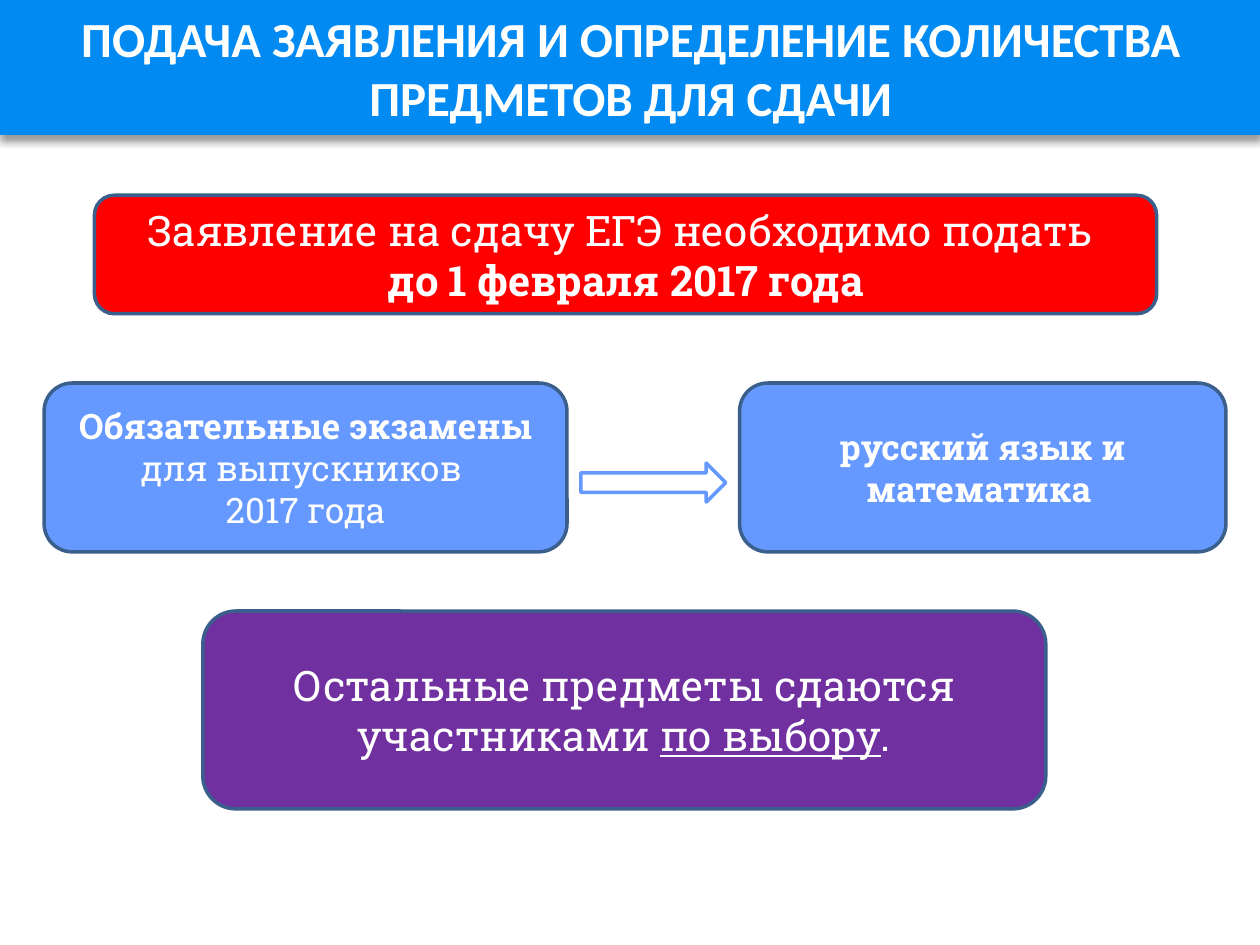
import dataclasses

import lxml.etree
import pptx
import pptx.dml.color
import pptx.enum.shapes
import pptx.enum.text
import pptx.oxml.ns
import pptx.util

Inches = pptx.util.Inches
Pt = pptx.util.Pt
SHAPE = pptx.enum.shapes.MSO_SHAPE


@dataclasses.dataclass(frozen=True)
class Theme:
    band: str = "008AF2"
    alert: str = "FF0000"
    exam: str = "6699FF"
    choice: str = "7030A0"
    edge: str = "3A5F8C"
    white: str = "FFFFFF"
    shade: str = "000000"
    head: str = "Calibri"
    body: str = "Roboto Slab"
    title: int = 28
    large: int = 24
    small: int = 20
    line: int = 2


THEME = Theme()


def color(code):
    return pptx.dml.color.RGBColor.from_string(code)


def paint(shape, fill, line=None):
    shape.fill.solid()
    shape.fill.fore_color.rgb = color(fill)
    if line:
        shape.line.color.rgb = color(line)
        shape.line.width = Pt(THEME.line)
    else:
        shape.line.fill.background()


def place(shape, box):
    shape.left, shape.top, shape.width, shape.height = map(Inches, box)


def write(shape, lines, face, size):
    """Each line is a list of runs: (text, bold, underline)."""
    frame = shape.text_frame
    frame.word_wrap = True
    frame.auto_size = pptx.enum.text.MSO_AUTO_SIZE.NONE
    frame.vertical_anchor = pptx.enum.text.MSO_ANCHOR.MIDDLE
    for i, line in enumerate(lines):
        para = frame.add_paragraph() if i else frame.paragraphs[0]
        para.alignment = pptx.enum.text.PP_ALIGN.CENTER
        for text, bold, under in line:
            run = para.add_run()
            run.text = text
            font = run.font
            font.name, font.size = face, Pt(size)
            font.bold, font.underline = bold, under
            font.color.rgb = color(THEME.white)


def shade(shape):
    """Soft shadow straight below the shape."""
    shape.shadow.inherit = False
    qn = pptx.oxml.ns.qn
    list_ = shape.element.spPr.find(qn("a:effectLst"))
    outer = lxml.etree.SubElement(
        list_, qn("a:outerShdw"), blurRad=str(Pt(4)), dist=str(Pt(4)),
        dir="5400000", algn="t", rotWithShape="0")
    tint = lxml.etree.SubElement(outer, qn("a:srgbClr"), val=THEME.shade)
    lxml.etree.SubElement(tint, qn("a:alpha"), val="40000")


def add(slide, kind, box, fill, line):
    shape = slide.shapes.add_shape(kind, *map(Inches, box))
    shape.shadow.inherit = False
    paint(shape, fill, line)
    return shape


def card(slide, box, fill, lines, size):
    shape = add(slide, SHAPE.ROUNDED_RECTANGLE, box, fill, THEME.edge)
    write(shape, lines, THEME.body, size)


def header(slide, box):
    title = slide.shapes.title
    place(title, box)
    paint(title, THEME.band)
    shade(title)
    text = "ПОДАЧА ЗАЯВЛЕНИЯ И ОПРЕДЕЛЕНИЕ КОЛИЧЕСТВА ПРЕДМЕТОВ ДЛЯ СДАЧИ"
    write(title, [[(text, True, False)]], THEME.head, THEME.title)


def notice(slide, box):
    card(slide, box, THEME.alert, [
        [("Заявление на сдачу ЕГЭ необходимо подать ", False, False)],
        [("до 1 февраля 2017 года", True, False)],
    ], THEME.large)


def exams(slide, box):
    left, top, width, height = box
    first, last, gap, thick = 4.15, 3.86, 0.11, 0.31
    # Group of pupils
    card(slide, (left, top, first, height), THEME.exam, [
        [("Обязательные экзамены ", True, False),
         ("для выпускников ", False, False)],
        [("2017 года", False, False)],
    ], THEME.small)
    # Required subjects
    card(slide, (left + width - last, top, last, height), THEME.exam, [
        [("русский язык и математика ", True, False)],
    ], THEME.small)
    # Arrow between the two cards, a little below the middle
    span = width - first - last - 2 * gap
    drop = (height - thick) / 2 + 0.12
    add(slide, SHAPE.RIGHT_ARROW, (left + first + gap, top + drop, span, thick),
        THEME.white, THEME.exam)


def choice(slide, box):
    card(slide, box, THEME.choice, [
        [("Остальные предметы сдаются участниками ", False, False),
         ("по выбору", False, True), (".", False, False)],
    ], THEME.large)


def main():
    deck = pptx.Presentation()
    deck.slide_width, deck.slide_height = Inches(10), Inches(7.5)
    slide = deck.slides.add_slide(deck.slide_layouts.get_by_name("Title Only"))
    header(slide, (0, 0, 10.01, 1.07))
    notice(slide, (0.75, 1.55, 8.43, 0.94))
    exams(slide, (0.35, 3.04, 9.38, 1.34))
    choice(slide, (1.61, 4.85, 6.69, 1.57))
    deck.save("out.pptx")


if __name__ == "__main__":
    main()
